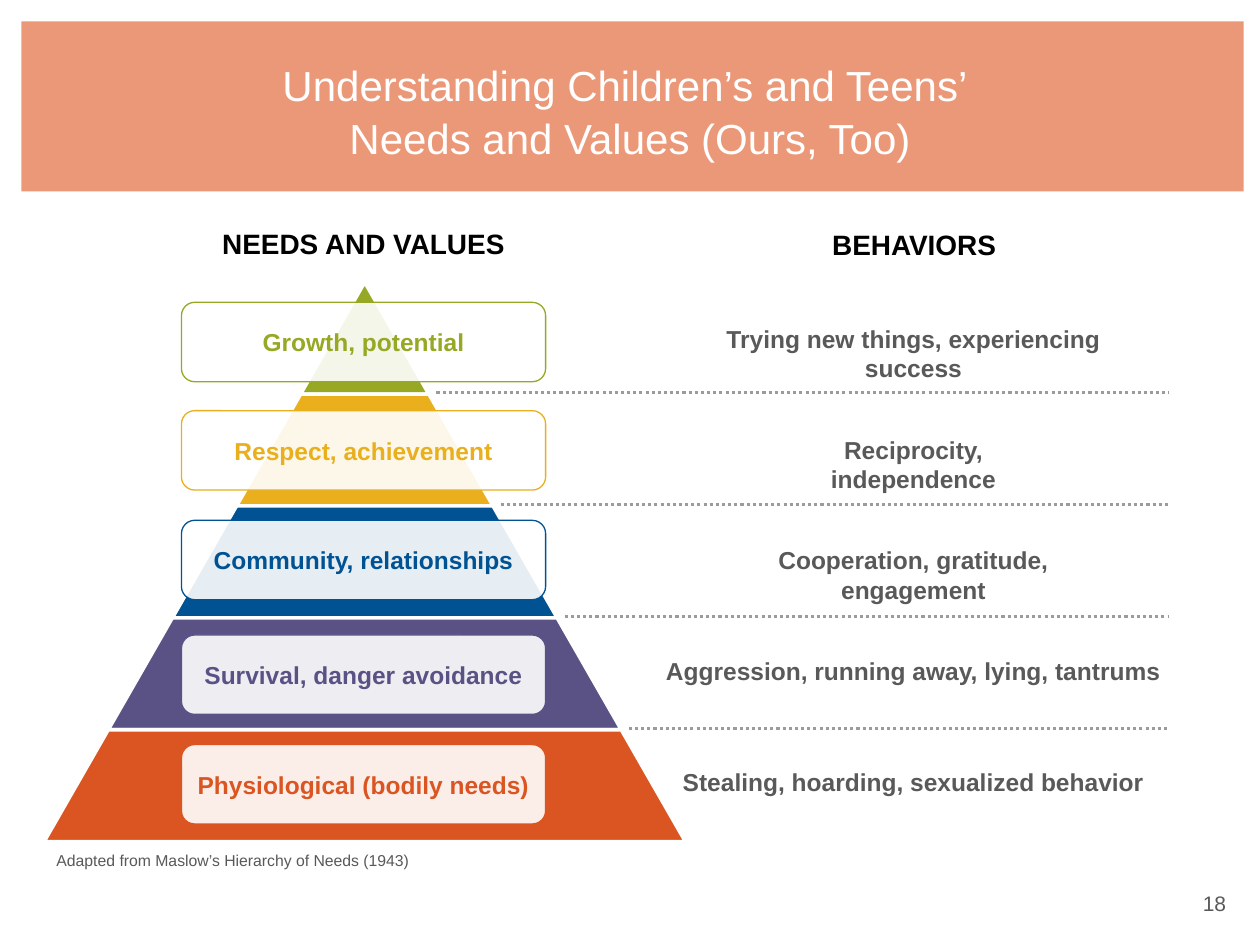
import dataclasses

import lxml.etree
import pptx
import pptx.dml.color
import pptx.enum.dml
import pptx.enum.shapes
import pptx.enum.text
import pptx.oxml.ns
import pptx.util

Inches = pptx.util.Inches
Pt = pptx.util.Pt
SHAPE = pptx.enum.shapes.MSO_SHAPE
ALIGN = pptx.enum.text.PP_ALIGN
ANCHOR = pptx.enum.text.MSO_ANCHOR


@dataclasses.dataclass(frozen=True)
class Theme:
    font: str = "Arial"
    white: str = "FFFFFF"
    black: str = "000000"
    gray: str = "595959"
    dots: str = "9B9B9B"
    banner: str = "EB9878"
    tiers: tuple = ("97A825", "E9AF1D", "005293", "5A5284", "DA5521")
    title: int = 24
    heading: int = 16
    body: int = 14
    number: int = 12
    source: int = 9


THEME = Theme()
NEEDS = (
    ("Growth, potential", 2.4),
    ("Respect, achievement", 3.26),
    ("Community, relationships", 4.13),
    ("Survival, danger avoidance", 5.04),
    ("Physiological (bodily needs)", 5.91),
)
BEHAVIORS = (
    ("Trying new things, experiencing success", 3.97),
    ("Reciprocity, independence", 2.66),
    ("Cooperation, gratitude, engagement", 3.54),
    ("Aggression, running away, lying, tantrums", 4.17),
    ("Stealing, hoarding, sexualized behavior", 3.86),
)


def rgb(color):
    return pptx.dml.color.RGBColor.from_string(color)


def write(sp, lines, size, color, bold=False, align=ALIGN.CENTER, anchor=ANCHOR.TOP):
    tf = sp.text_frame
    tf.word_wrap = True
    tf.vertical_anchor = anchor
    p = tf.paragraphs[0]
    p.alignment = align
    for i, line in enumerate(lines):
        if i:
            p.add_line_break()
        r = p.add_run()
        r.text = line
        r.font.name = THEME.font
        r.font.size = Pt(size)
        r.font.bold = bold
        r.font.color.rgb = rgb(color)
    return tf


def add_text(s, box, lines, size, color, **style):
    sp = s.shapes.add_textbox(*map(Inches, box))
    return write(sp, lines, size, color, **style)


def add_block(s, kind, box, fill, line=None, width=0):
    sp = s.shapes.add_shape(kind, *map(Inches, box))
    sp.shadow.inherit = False
    sp.fill.solid()
    sp.fill.fore_color.rgb = rgb(fill)
    if line:
        sp.line.color.rgb = rgb(line)
        sp.line.width = Pt(width)
    else:
        sp.line.fill.background()
    return sp


def add_banner(s, box):
    left, top, width, _ = box
    add_block(s, SHAPE.RECTANGLE, box, THEME.banner)
    lines = ("Understanding Children’s and Teens’ ", "Needs and Values (Ours, Too)")
    tf = add_text(s, (left + 0.33, top + 0.21, width - 0.7, 0.98), lines,
                  THEME.title, THEME.white, anchor=ANCHOR.MIDDLE)
    tf.paragraphs[0].line_spacing = 1.05


def add_pyramid(s, box):
    left, top, width, height = box
    step = height / len(THEME.tiers)
    slope = width / 2 / height
    center = left + width / 2
    for i, color in enumerate(THEME.tiers):
        half = slope * step * (i + 1)
        tier = add_block(s, SHAPE.TRAPEZOID, (center - half, top + i * step, 2 * half, step),
                         color, THEME.white, 2)
        tier.adjustments[0] = slope


def add_needs(s, left, width, height):
    for (label, top), color in zip(NEEDS, THEME.tiers):
        sp = add_block(s, SHAPE.ROUNDED_RECTANGLE, (left, top, width, height),
                       THEME.white, color, 0.75)
        clr = sp._element.spPr.find(".//" + pptx.oxml.ns.qn("a:srgbClr"))
        lxml.etree.SubElement(clr, pptx.oxml.ns.qn("a:alpha"), val="90000")
        tf = write(sp, (label,), THEME.body, color, bold=True, anchor=ANCHOR.MIDDLE)
        tf.margin_left = tf.margin_right = Inches(0.06)
        tf.margin_top = tf.margin_bottom = Inches(0.06)


def add_behaviors(s, center, top, step):
    for i, (label, width) in enumerate(BEHAVIORS):
        add_text(s, (center - width / 2, top + i * step, width, 0.34), (label,),
                 THEME.body, THEME.gray, bold=True)


def add_dividers(s, pyramid, right):
    left, top, width, height = pyramid
    count = len(THEME.tiers)
    for i in range(1, count):
        start = left + width / 2 * (1 + i / count) + 0.06
        y = top + height * i / count - 0.01
        line = s.shapes.add_connector(pptx.enum.shapes.MSO_CONNECTOR.STRAIGHT,
                                      *map(Inches, (start, y, right, y)))
        line.line.color.rgb = rgb(THEME.dots)
        line.line.width = Pt(1.75)
        line.line.dash_style = pptx.enum.dml.MSO_LINE.ROUND_DOT
        lxml.etree.SubElement(line._element.spPr, pptx.oxml.ns.qn("a:effectLst"))


def add_headings(s):
    for label, box in (("NEEDS AND VALUES", (1.47, 1.75, 2.83, 0.37)),
                       ("BEHAVIORS", (6.36, 1.76, 1.79, 0.37))):
        add_text(s, box, (label,), THEME.heading, THEME.black, bold=True)


def add_footer(s):
    add_text(s, (0.35, 6.7, 3.1, 0.25), ("Adapted from Maslow’s Hierarchy of Needs (1943)",),
             THEME.source, THEME.gray, align=ALIGN.LEFT)
    add_text(s, (7.5, 7.02, 2.33, 0.32), ("18",), THEME.number, THEME.gray, align=ALIGN.RIGHT)


def main():
    prs = pptx.Presentation()
    prs.slide_width = Inches(10)
    prs.slide_height = Inches(7.5)
    s = prs.slides.add_slide(prs.slide_layouts[6])
    pyramid = (0.35, 2.24, 5.09, 4.44)
    add_banner(s, (0.17, 0.17, 9.7, 1.35))
    add_pyramid(s, pyramid)
    add_headings(s)
    add_behaviors(s, 7.25, 2.52, 0.88)
    add_needs(s, 1.44, 2.89, 0.63)
    add_dividers(s, pyramid, 9.28)
    add_footer(s)
    prs.save("out.pptx")


if __name__ == "__main__":
    main()
